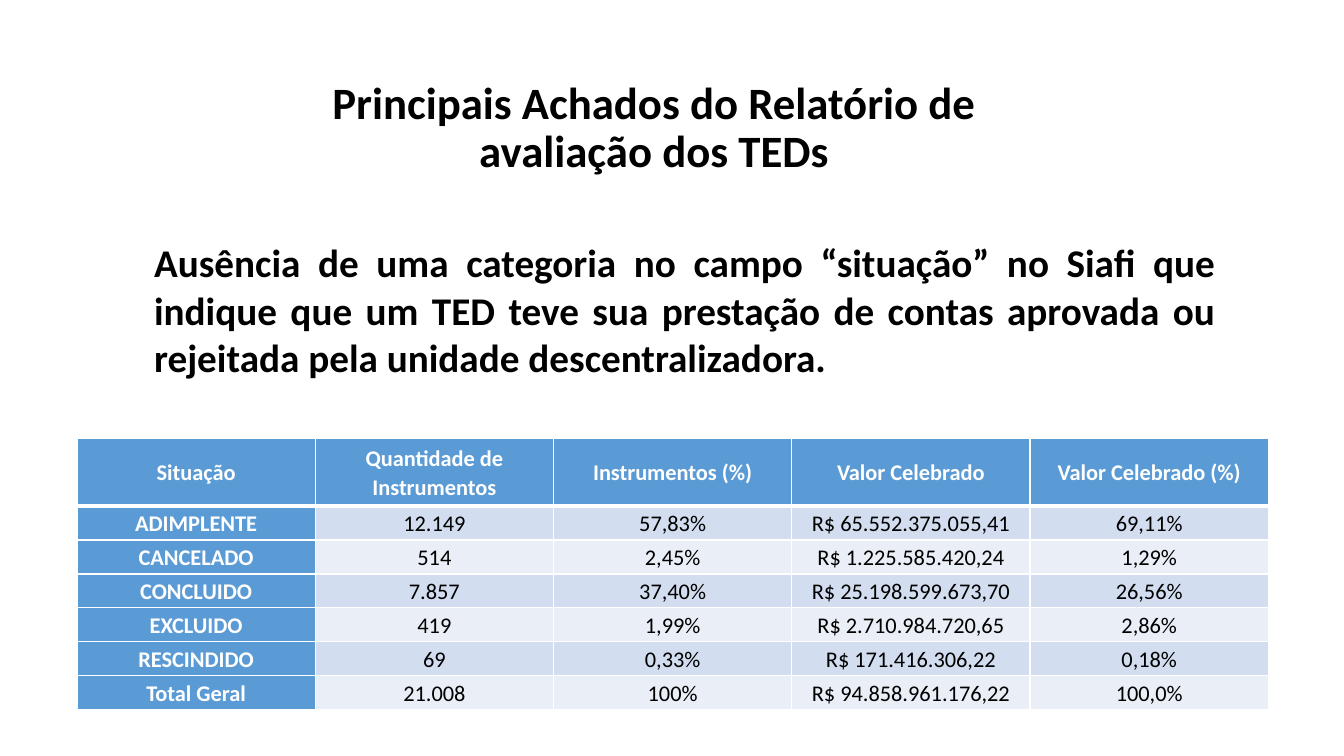
from dataclasses import dataclass

from lxml.etree import SubElement
from pptx import Presentation
from pptx.dml.color import RGBColor
from pptx.enum.text import MSO_ANCHOR as Anchor, PP_ALIGN as Align
from pptx.oxml.ns import qn
from pptx.slide import Slide
from pptx.table import _Cell as Cell
from pptx.text.text import _Paragraph as Para
from pptx.util import Pt

BLACK = RGBColor(0x00, 0x00, 0x00)
WHITE = RGBColor(0xFF, 0xFF, 0xFF)
BLUE = RGBColor(0x5B, 0x9B, 0xD5)
DARK = RGBColor(0xD2, 0xDE, 0xEF)
LIGHT = RGBColor(0xEA, 0xEF, 0xF7)

COL_W = 170.2
HEAD_H = 48.4
ROW_H = 24.2


@dataclass
class Block:
    text: str
    left: float
    top: float
    width: float
    height: float
    size: float
    align: Align
    lead: float
    after: float


BLOCKS = [
    Block("Principais Achados do Relatório de avaliação dos TEDs",
          227.5, 54, 479.5, 77, 32, Align.CENTER, 0.9, 0),
    Block("Ausência de uma categoria no campo “situação” no Siafi que indique "
          "que um TED teve sua prestação de contas aprovada ou rejeitada pela "
          "unidade descentralizadora.",
          103, 167, 772, 109, 28, Align.JUSTIFY, 1.0, 6),
]

ROWS = [
    ("Situação", "Quantidade de Instrumentos", "Instrumentos (%)",
     "Valor Celebrado", "Valor Celebrado (%)"),
    ("ADIMPLENTE", "12.149", "57,83%", "R$ 65.552.375.055,41", "69,11%"),
    ("CANCELADO", "514", "2,45%", "R$ 1.225.585.420,24", "1,29%"),
    ("CONCLUIDO", "7.857", "37,40%", "R$ 25.198.599.673,70", "26,56%"),
    ("EXCLUIDO", "419", "1,99%", "R$ 2.710.984.720,65", "2,86%"),
    ("RESCINDIDO", "69", "0,33%", "R$ 171.416.306,22", "0,18%"),
    ("Total Geral", "21.008", "100%", "R$ 94.858.961.176,22", "100,0%"),
]


def style(para: Para, size: float, color: RGBColor, bold: bool,
          align: Align, lead: float, after: float) -> None:
    para.alignment = align
    para.line_spacing = lead
    para.space_before = Pt(0)
    para.space_after = Pt(after)
    font = para.font
    font.name = "Calibri"
    font.size = Pt(size)
    font.bold = bold
    font.color.rgb = color


def add_block(slide: Slide, block: Block) -> None:
    box = slide.shapes.add_textbox(Pt(block.left), Pt(block.top),
                                   Pt(block.width), Pt(block.height))
    frame = box.text_frame
    frame.word_wrap = True
    para = frame.paragraphs[0]
    para.text = block.text
    style(para, block.size, BLACK, True, block.align, block.lead, block.after)


def add_edge(cell: Cell, side: str, width: float) -> None:
    props = cell._tc.get_or_add_tcPr()
    line = SubElement(props, qn(f"a:ln{side}"), w=str(Pt(width)))
    fill = SubElement(line, qn("a:solidFill"))
    SubElement(fill, qn("a:srgbClr"), val=str(WHITE))


def fill_cell(cell: Cell, text: str, row: int, col: int) -> None:
    label = row == 0 or col == 0
    edges = {"L": 1, "R": 1, "T": 3 if row == 1 else 1, "B": 3 if row == 0 else 1}
    for side, width in edges.items():
        add_edge(cell, side, width)
    cell.fill.solid()
    cell.fill.fore_color.rgb = BLUE if label else DARK if row % 2 else LIGHT
    cell.margin_left = cell.margin_right = Pt(3.6)
    cell.margin_top = cell.margin_bottom = Pt(0)
    cell.vertical_anchor = Anchor.MIDDLE
    para = cell.text_frame.paragraphs[0]
    para.text = text
    style(para, 16, WHITE if label else BLACK, label, Align.CENTER, 1.07, 6)


def add_grid(slide: Slide) -> None:
    rows, cols = len(ROWS), len(ROWS[0])
    grid = slide.shapes.add_table(rows, cols, Pt(55), Pt(313.2), Pt(COL_W * cols),
                                  Pt(HEAD_H + ROW_H * (rows - 1))).table
    for column in grid.columns:
        column.width = Pt(COL_W)
    for row, texts in enumerate(ROWS):
        grid.rows[row].height = Pt(ROW_H if row else HEAD_H)
        for col, text in enumerate(texts):
            fill_cell(grid.cell(row, col), text, row, col)


def main() -> None:
    deck = Presentation()
    deck.slide_width = Pt(960)
    deck.slide_height = Pt(540)
    slide = deck.slides.add_slide(deck.slide_layouts[6])
    for block in BLOCKS:
        add_block(slide, block)
    add_grid(slide)
    deck.save("out.pptx")


if __name__ == "__main__":
    main()
